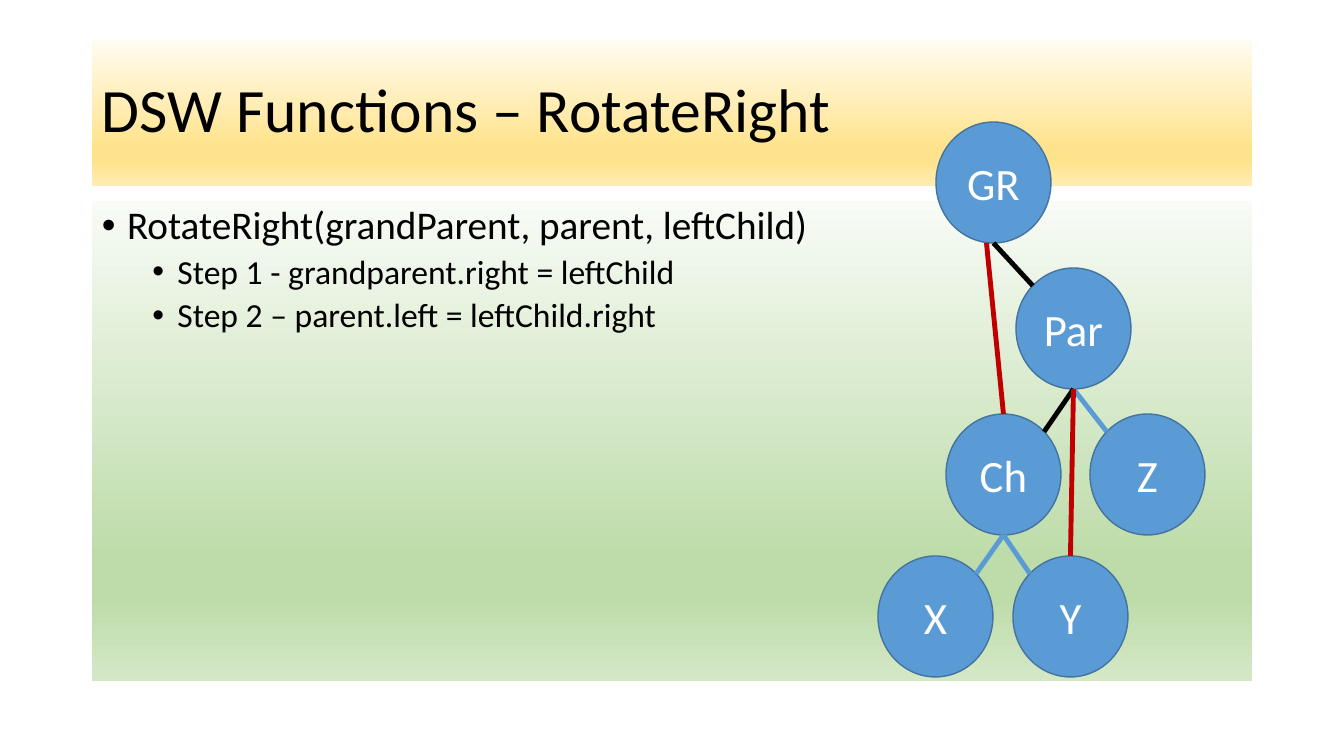
from math import sqrt

from pptx import Presentation
from pptx.dml.color import RGBColor
from pptx.enum.shapes import MSO_CONNECTOR as CXN, MSO_SHAPE as SHP
from pptx.enum.text import MSO_ANCHOR as ANC, PP_ALIGN as AL
from pptx.oxml.ns import qn
from pptx.util import Pt
from lxml.etree import SubElement

SCALE = 12192000 / 1344
BLUE, BLACK, RED = "5B9BD5", "000000", "C00000"


def px(n):
    return round(n * SCALE)


def rgb(color):
    return RGBColor.from_string(color)


class TreeSlide:
    font = "Calibri"
    node_w, node_h = 115, 121
    edge = 3.5

    def __init__(self, prs):
        self.shapes = prs.slides.add_slide(prs.slide_layouts[6]).shapes

    def run(self, p, text, size, color):
        r = p.add_run()
        r.text = text
        r.font.name, r.font.size = self.font, Pt(size)
        r.font.color.rgb = rgb(color)

    def panel(self, x, y, w, h, stops, anchor):
        s = self.shapes.add_textbox(px(x), px(y), px(w), px(h))
        s.fill.gradient()
        s.fill.gradient_angle = 270
        gs_list = s._element.spPr.find(".//" + qn("a:gsLst"))
        for gs in list(gs_list):
            gs_list.remove(gs)
        for pos, color in stops:
            gs = SubElement(gs_list, qn("a:gs"), pos=str(pos * 1000))
            SubElement(gs, qn("a:srgbClr"), val=color)
        tf = s.text_frame
        tf.word_wrap = True
        tf.vertical_anchor = anchor
        return tf

    def title(self, tf, text):
        p = tf.paragraphs[0]
        p.line_spacing = 0.9
        self.run(p, text, 44, BLACK)

    def bullets(self, tf, items):
        for i, (level, text) in enumerate(items):
            p = tf.add_paragraph() if i else tf.paragraphs[0]
            p.level = level
            p.line_spacing = 0.9
            p.space_before = Pt(5 if level else 10)
            pPr = p._p.get_or_add_pPr()
            pPr.set("marL", str(228600 + 457200 * level))
            pPr.set("indent", "-228600")
            SubElement(pPr, qn("a:buFont"), typeface="Arial")
            SubElement(pPr, qn("a:buChar"), char="•")
            self.run(p, text, 24 if level else 28, BLACK)

    def node(self, text, x, y):
        s = self.shapes.add_shape(SHP.OVAL, px(x), px(y), px(self.node_w), px(self.node_h))
        s.shadow.inherit = False
        s.fill.solid()
        s.fill.fore_color.rgb = rgb(BLUE)
        s.line.color.rgb = rgb("43739E")
        s.line.width = Pt(1)
        tf = s.text_frame
        tf.word_wrap = True
        tf.vertical_anchor = ANC.MIDDLE
        p = tf.paragraphs[0]
        p.alignment = AL.CENTER
        self.run(p, text, 32, "FFFFFF")
        return s

    def line(self, x1, y1, x2, y2, color):
        c = self.shapes.add_connector(CXN.STRAIGHT, x1, y1, x2, y2)
        c.line.color.rgb = rgb(color)
        c.line.width = Pt(self.edge)
        SubElement(c._element.spPr, qn("a:effectLst"))
        return c

    def branch(self, parent, child, side, color):
        x = child.left + child.width / 2 * (1 + side / sqrt(2))
        y = child.top + child.height / 2 * (1 - 1 / sqrt(2))
        self.line(parent.left + parent.width // 2, parent.top + parent.height,
                  round(x), round(y), color)

    def relink(self, parent, child, shift):
        c = self.line(parent.left + parent.width // 2 + px(shift),
                      parent.top + parent.height,
                      child.left + child.width // 2, child.top, RED)
        c.end_connect(child, 0)


def main():
    prs = Presentation()
    prs.slide_width, prs.slide_height = px(1344), px(756)
    s = TreeSlide(prs)

    gold = [(0, "FFFCF2"), (74, "FFE38C"), (83, "FFE38C"), (100, "FFECB2")]
    green = [(0, "F8FBF6"), (74, "BEDCAA"), (83, "BEDCAA"), (100, "D4E8C6")]
    s.title(s.panel(92, 40, 1160, 146, gold, ANC.MIDDLE), "DSW Functions – RotateRight")
    s.bullets(s.panel(92, 201, 1160, 480, green, ANC.TOP), [
        (0, "RotateRight(grandParent, parent, leftChild)"),
        (1, "Step 1 - grandparent.right = leftChild"),
        (1, "Step 2 – parent.left = leftChild.right"),
    ])

    places = [("GR", 936, 122), ("Par", 1016, 268), ("Ch", 946, 414),
              ("X", 878, 556), ("Y", 1013, 556), ("Z", 1090, 414)]
    nodes = {name: s.node(name, x, y) for name, x, y in places}

    for parent, child, side, color in [
        ("GR", "Par", -1, BLACK),
        ("Par", "Z", -1, BLUE),
        ("Par", "Ch", 1, BLACK),
        ("Ch", "Y", -1, BLUE),
        ("Ch", "X", 1, BLUE),
    ]:
        s.branch(nodes[parent], nodes[child], side, color)
    s.relink(nodes["GR"], nodes["Ch"], -7)
    s.relink(nodes["Par"], nodes["Y"], 0)

    prs.save("out.pptx")


if __name__ == "__main__":
    main()
